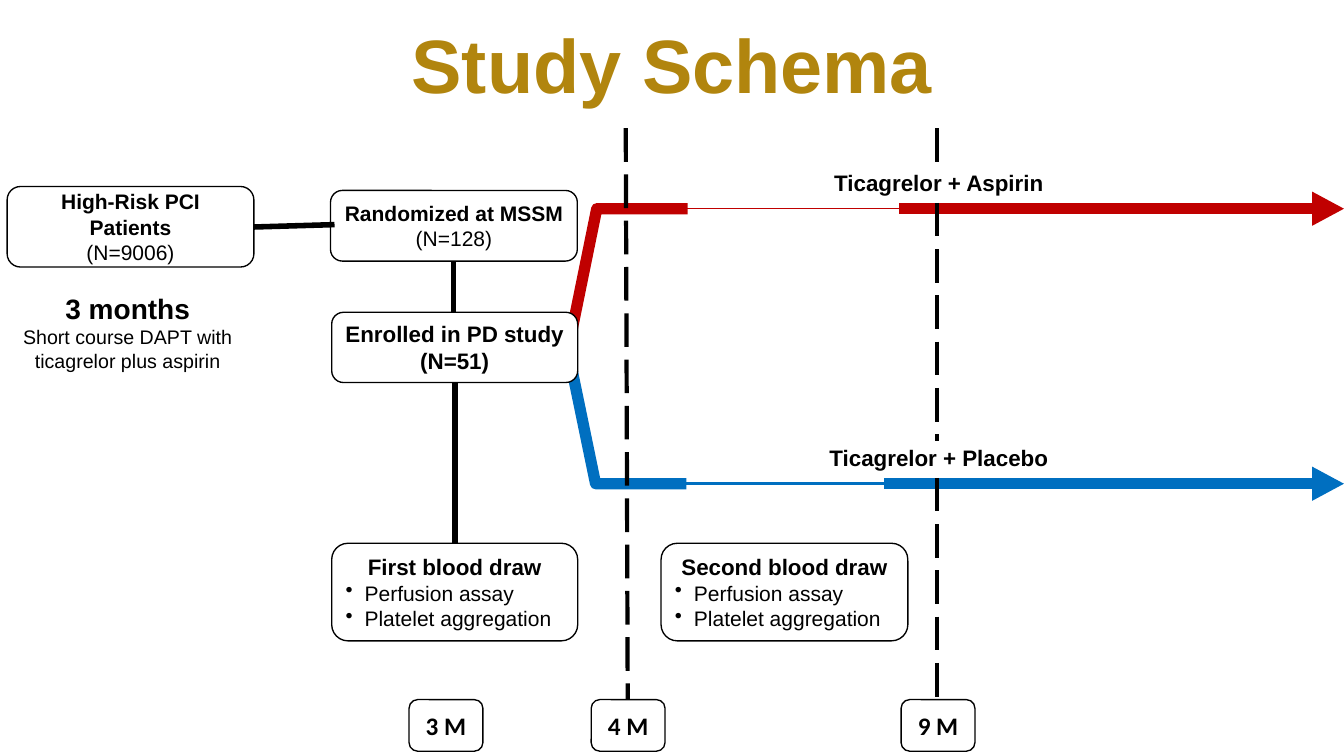
"""Build the study schema slide: enrolment flow, two treatment arms and visit months."""
from lxml import etree
from pptx import Presentation
from pptx.dml.color import RGBColor
from pptx.enum.dml import MSO_LINE
from pptx.enum.shapes import MSO_CONNECTOR, MSO_SHAPE
from pptx.enum.text import MSO_ANCHOR, PP_ALIGN
from pptx.oxml.ns import qn
from pptx.util import Cm, Pt

BLACK = RGBColor(0x00, 0x00, 0x00)
WHITE = RGBColor(0xFF, 0xFF, 0xFF)
GOLD = RGBColor(0xB1, 0x85, 0x0E)
RED = RGBColor(0xC0, 0x00, 0x00)
BLUE = RGBColor(0x00, 0x6F, 0xC0)

SLIDE_WIDTH, SLIDE_HEIGHT = 33.87, 19.05
ASSAYS = [("Perfusion assay", 15, False, True), ("Platelet aggregation", 15, False, True)]

# Each line of text is (wording, size, bold, bulleted); each area is left, top, width, height.
TITLE = ((10.0, 0.41, 13.87, 2.36), [("Study Schema", 54, True, False)])
RUN_IN = ((0.2, 7.26, 6.04, 2.2), [
    ("3 months", 20, True, False),
    ("Short course DAPT with ticagrelor plus aspirin", 14, False, False),
])
STAGES = [
    ((0.18, 4.7, 6.22, 2.03), [("High-Risk PCI Patients", 15, True, False),
                               ("(N=9006)", 15, False, False)]),
    ((8.33, 4.8, 6.22, 1.78), [("Randomized at MSSM", 15, True, False),
                               ("(N=128)", 15, False, False)]),
    ((8.36, 7.87, 6.2, 1.77), [("Enrolled in PD study (N=51)", 16, True, False)]),
    ((8.36, 13.69, 6.2, 2.46), [("First blood draw", 16, True, False)] + ASSAYS),
    ((16.66, 13.69, 6.22, 2.46), [("Second blood draw", 16, True, False)] + ASSAYS),
]
LINKS = [(6.4, 5.72, 8.43, 5.66), (11.43, 6.58, 11.43, 7.87), (11.46, 9.63, 11.46, 13.69)]
MONTHS = [("3 M", 10.31), ("4 M", 14.9), ("9 M", 22.71)]
MONTH_TOP, MONTH_WIDTH, MONTH_HEIGHT = 17.63, 1.86, 1.3
VISITS = [
    (15.77, 3.23, 15.82, 17.96),
    (23.62, 3.23, 23.62, 4.17),
    (23.62, 5.11, 23.62, 11.1),
    (23.62, 12.04, 23.62, 17.96),
]
ARMS = [
    ("Ticagrelor + Aspirin", RED, 5.26, (14.33, 8.74), 15.04, 17.33, 0.84, 22.66),
    ("Ticagrelor + Placebo", BLUE, 12.19, (14.3, 8.76), 15.01, 17.3, 1.8, 22.28),
]
THIN_START, THIN_END = 15.88, 23.8
HEAD_START, HEAD_HALF = 33.07, 0.43
LABEL_CENTRE, LABEL_WIDTH, LABEL_HEIGHT, LABEL_RISE = 23.66, 6.0, 0.74, 1.02
ARM_WEIGHT, LINK_WEIGHT, VISIT_WEIGHT, BORDER_WEIGHT = 8.04, 3.96, 3, 0.96


def add_bullet(paragraph):
    properties = paragraph._p.get_or_add_pPr()
    properties.set("marL", str(Cm(0.53)))
    properties.set("indent", str(-Cm(0.48)))
    etree.SubElement(properties, qn("a:buChar")).set("char", "•")


def write(frame, lines, font="Arial", color=BLACK):
    frame.word_wrap = True
    frame.vertical_anchor = MSO_ANCHOR.MIDDLE
    frame.margin_left = frame.margin_right = Cm(0.18)
    frame.margin_top = frame.margin_bottom = 0
    for index, (wording, size, bold, bulleted) in enumerate(lines):
        paragraph = frame.paragraphs[0] if index == 0 else frame.add_paragraph()
        paragraph.text = wording
        paragraph.alignment = PP_ALIGN.LEFT if bulleted else PP_ALIGN.CENTER
        if bulleted:
            add_bullet(paragraph)
        paragraph.font.name = font
        paragraph.font.size = Pt(size)
        paragraph.font.bold = bold
        paragraph.font.color.rgb = color


def add_text(slide, area, lines, color=BLACK):
    box = slide.shapes.add_textbox(*map(Cm, area))
    write(box.text_frame, lines, color=color)


def add_box(slide, area, lines, font="Arial"):
    box = slide.shapes.add_shape(MSO_SHAPE.ROUNDED_RECTANGLE, *map(Cm, area))
    box.shadow.inherit = False
    box.fill.solid()
    box.fill.fore_color.rgb = WHITE
    box.line.color.rgb = BLACK
    box.line.width = Pt(BORDER_WEIGHT)
    write(box.text_frame, lines, font)


def add_line(slide, ends, color, weight, dash=None):
    line = slide.shapes.add_connector(MSO_CONNECTOR.STRAIGHT, *map(Cm, ends))
    line.line.color.rgb = color
    line.line.width = Pt(weight)
    if dash:
        line.line.dash_style = dash
    etree.SubElement(line._element.spPr, qn("a:effectLst"))


def add_outline(slide, points, close):
    corners = [(Cm(x), Cm(y)) for x, y in points]
    builder = slide.shapes.build_freeform(*corners[0])
    builder.add_line_segments(corners[1:], close=close)
    outline = builder.convert_to_shape()
    outline.shadow.inherit = False
    return outline


def add_arm(slide, color, y, origin, bend, elbow_end, thin_weight, thick_start):
    elbow = add_outline(slide, [origin, (bend, y), (elbow_end, y)], close=False)
    elbow.fill.background()
    elbow.line.color.rgb = color
    elbow.line.width = Pt(ARM_WEIGHT)
    add_line(slide, (THIN_START, y, THIN_END, y), color, thin_weight)
    add_line(slide, (thick_start, y, HEAD_START + 0.1, y), color, ARM_WEIGHT)
    head = add_outline(slide, [(HEAD_START, y - HEAD_HALF), (SLIDE_WIDTH, y),
                               (HEAD_START, y + HEAD_HALF)], close=True)
    head.fill.solid()
    head.fill.fore_color.rgb = color
    head.line.fill.background()


def main():
    presentation = Presentation()
    presentation.slide_width = Cm(SLIDE_WIDTH)
    presentation.slide_height = Cm(SLIDE_HEIGHT)
    slide = presentation.slides.add_slide(presentation.slide_layouts[6])

    add_text(slide, *TITLE, color=GOLD)
    add_text(slide, *RUN_IN)
    for _, *course in ARMS:
        add_arm(slide, *course)
    for ends in VISITS:
        add_line(slide, ends, BLACK, VISIT_WEIGHT, MSO_LINE.LONG_DASH)
    for label, _, y, *_ in ARMS:
        area = (LABEL_CENTRE - LABEL_WIDTH / 2, y - LABEL_RISE, LABEL_WIDTH, LABEL_HEIGHT)
        add_text(slide, area, [(label, 16, True, False)])
    for area, lines in STAGES:
        add_box(slide, area, lines)
    for ends in LINKS:
        add_line(slide, ends, BLACK, LINK_WEIGHT)
    for month, left in MONTHS:
        area = (left, MONTH_TOP, MONTH_WIDTH, MONTH_HEIGHT)
        add_box(slide, area, [(month, 18, True, False)], "Calibri")

    presentation.save("out.pptx")


if __name__ == "__main__":
    main()
